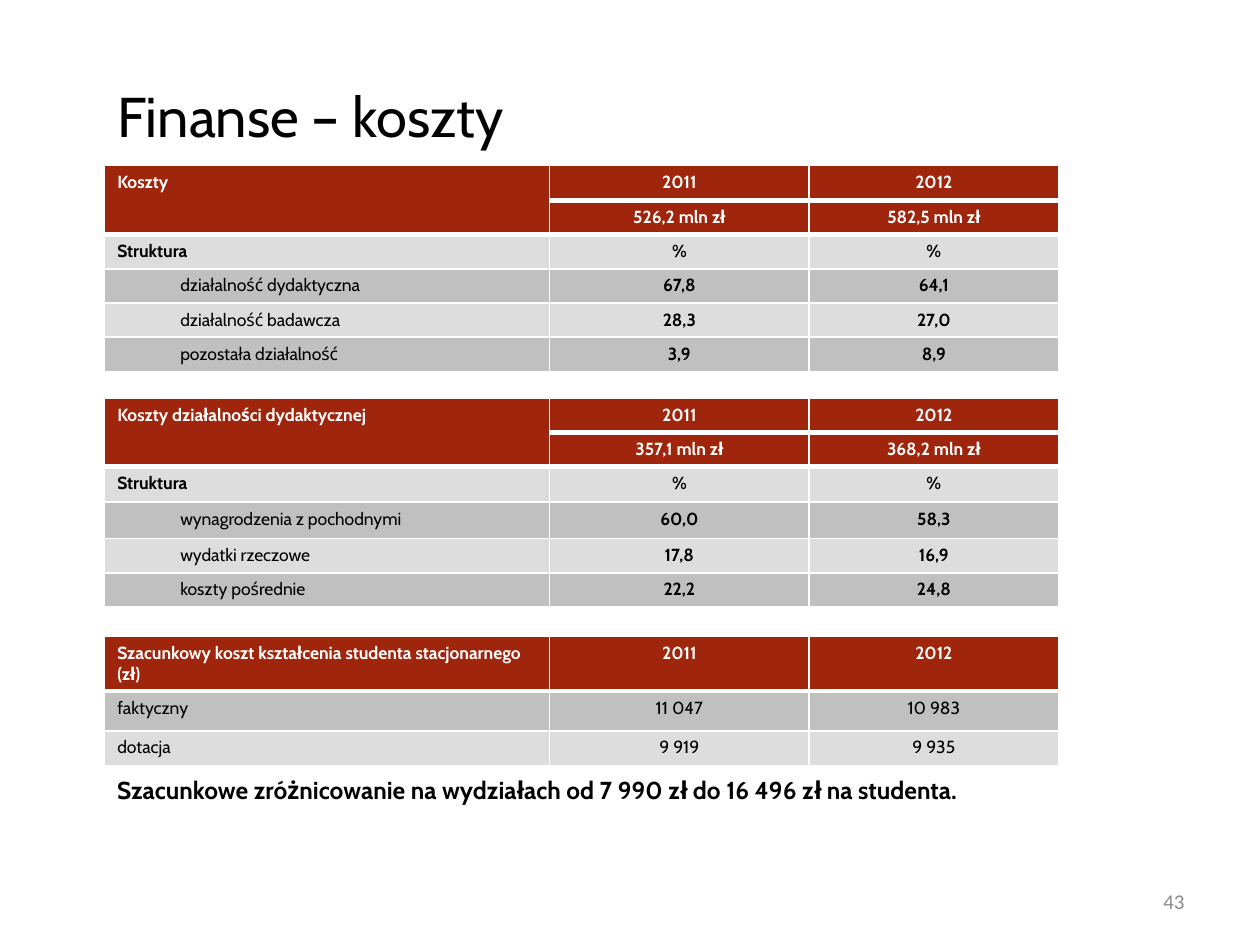
from pptx import Presentation
from pptx import util as u
from pptx.dml.color import RGBColor
from pptx.enum import text
from pptx.oxml.ns import qn
from lxml import etree

RED, LIGHT, GREY = "9F250D", "DDDDDD", "C0C0C0"
WHITE, BLACK = "FFFFFF", "000000"
LEFT = 2.11
COL_WIDTHS = (8.97, 5.23, 5.03)
YEARS = ("2011", "2012")


def color(value):
    return RGBColor.from_string(value)


def write(tf, content, col, size=10, bold=False, font="Cabin",
          align=text.PP_ALIGN.LEFT, indent=0, spacing=None):
    p = tf.paragraphs[0]
    p.alignment = align
    if spacing:
        p.line_spacing = spacing
    if indent:
        p._p.get_or_add_pPr().set("marL", str(u.Cm(indent)))
    r = p.add_run()
    r.text = content
    for name, value in {"size": u.Pt(size), "bold": bold, "name": font}.items():
        setattr(r.font, name, value)
    r.font.color.rgb = color(col)


def add_text(s, box, content, col, anchor=text.MSO_ANCHOR.TOP, **fmt):
    tf = s.shapes.add_textbox(*map(u.Cm, box)).text_frame
    tf.word_wrap = True
    tf.vertical_anchor = anchor
    write(tf, content, col, **fmt)


def set_borders(cell, top, bottom):
    tcPr = cell._tc.get_or_add_tcPr()
    widths = {"a:lnL": 1, "a:lnR": 1, "a:lnT": top, "a:lnB": bottom}
    for i, (tag, width) in enumerate(widths.items()):
        ln = etree.Element(qn(tag), w=str(u.Pt(width)))
        fill = etree.SubElement(ln, qn("a:solidFill"))
        etree.SubElement(fill, qn("a:srgbClr"), val=WHITE)
        tcPr.insert(i, ln)


def add_cost_table(s, top, heights, rows, headers, fills, bold_rows, indent_from):
    """Red header rows, then body rows; bold_rows maps row to (label, values)."""
    frame = s.shapes.add_table(len(rows), 3, u.Cm(LEFT), u.Cm(top),
                               u.Cm(sum(COL_WIDTHS)), u.Cm(sum(heights)))
    tbl = frame.table
    for column, width in zip(tbl.columns, COL_WIDTHS):
        column.width = u.Cm(width)
    for i, (row, height) in enumerate(zip(rows, heights)):
        tbl.rows[i].height = u.Cm(height)
        is_header = i < headers
        for j, content in enumerate(row):
            cell = tbl.cell(i, j)
            cell.fill.solid()
            cell.fill.fore_color.rgb = color(
                RED if is_header else fills[(i - headers) % 2])
            set_borders(cell, 3 if 0 < i <= headers else 1, 3 if is_header else 1)
            if content:
                write(cell.text_frame, content, WHITE if is_header else BLACK,
                      bold=bold_rows[i][j > 0],
                      align=text.PP_ALIGN.CENTER if j else text.PP_ALIGN.LEFT,
                      indent=1.27 if j == 0 and i >= indent_from else 0)
    if headers == 2:
        tbl.cell(0, 0).merge(tbl.cell(1, 0))


def add_structure_table(s, top, heights, title, totals, shares):
    rows = [(title, *YEARS), ("", *totals), ("Struktura", "%", "%"), *shares]
    bold_rows = [(True, True)] * 3 + [(False, True)] * len(shares)
    add_cost_table(s, top, heights, rows, 2, (LIGHT, GREY), bold_rows, 3)


def main():
    prs = Presentation()
    prs.slide_width, prs.slide_height = u.Cm(25.4), u.Cm(19.05)
    s = prs.slides.add_slide(prs.slide_layouts[6])

    # Title
    add_text(s, (LEFT, 1.32, 20.93, 2.01), "Finanse – koszty", BLACK,
             anchor=text.MSO_ANCHOR.MIDDLE, size=32)

    # Total costs and teaching costs
    add_structure_table(
        s, 3.33, (0.71, 0.69, 0.69, 0.69, 0.69, 0.69),
        "Koszty", ("526,2 mln zł", "582,5 mln zł"),
        [("działalność dydaktyczna", "67,8", "64,1"),
         ("działalność badawcza", "28,3", "27,0"),
         ("pozostała działalność", "3,9", "8,9")])
    add_structure_table(
        s, 8.03, (0.69, 0.69, 0.71, 0.74, 0.69, 0.69),
        "Koszty działalności dydaktycznej", ("357,1 mln zł", "368,2 mln zł"),
        [("wynagrodzenia z pochodnymi", "60,0", "58,3"),
         ("wydatki rzeczowe", "17,8", "16,9"),
         ("koszty pośrednie", "22,2", "24,8")])

    # Cost per student
    add_cost_table(
        s, 12.83, (1.08, 0.8, 0.71),
        [("Szacunkowy koszt kształcenia studenta stacjonarnego (zł)", *YEARS),
         ("faktyczny", "11 047", "10 983"),
         ("dotacja", "9 919", "9 935")],
        1, (GREY, LIGHT), [(True, True)] + [(False, False)] * 2, 3)

    # Closing remark and page number
    add_text(s, (LEFT, 15.62, 19.66, 0.79),
             "Szacunkowe zróżnicowanie na wydziałach od 7 990 zł do 16 496 zł "
             "na studenta.", BLACK, size=14, bold=True, spacing=0.8)
    add_text(s, (18.2, 17.66, 5.93, 1.01), "43", "8C8C8C", size=12,
             anchor=text.MSO_ANCHOR.MIDDLE, font="Calibri",
             align=text.PP_ALIGN.RIGHT)

    prs.save("out.pptx")


if __name__ == "__main__":
    main()
